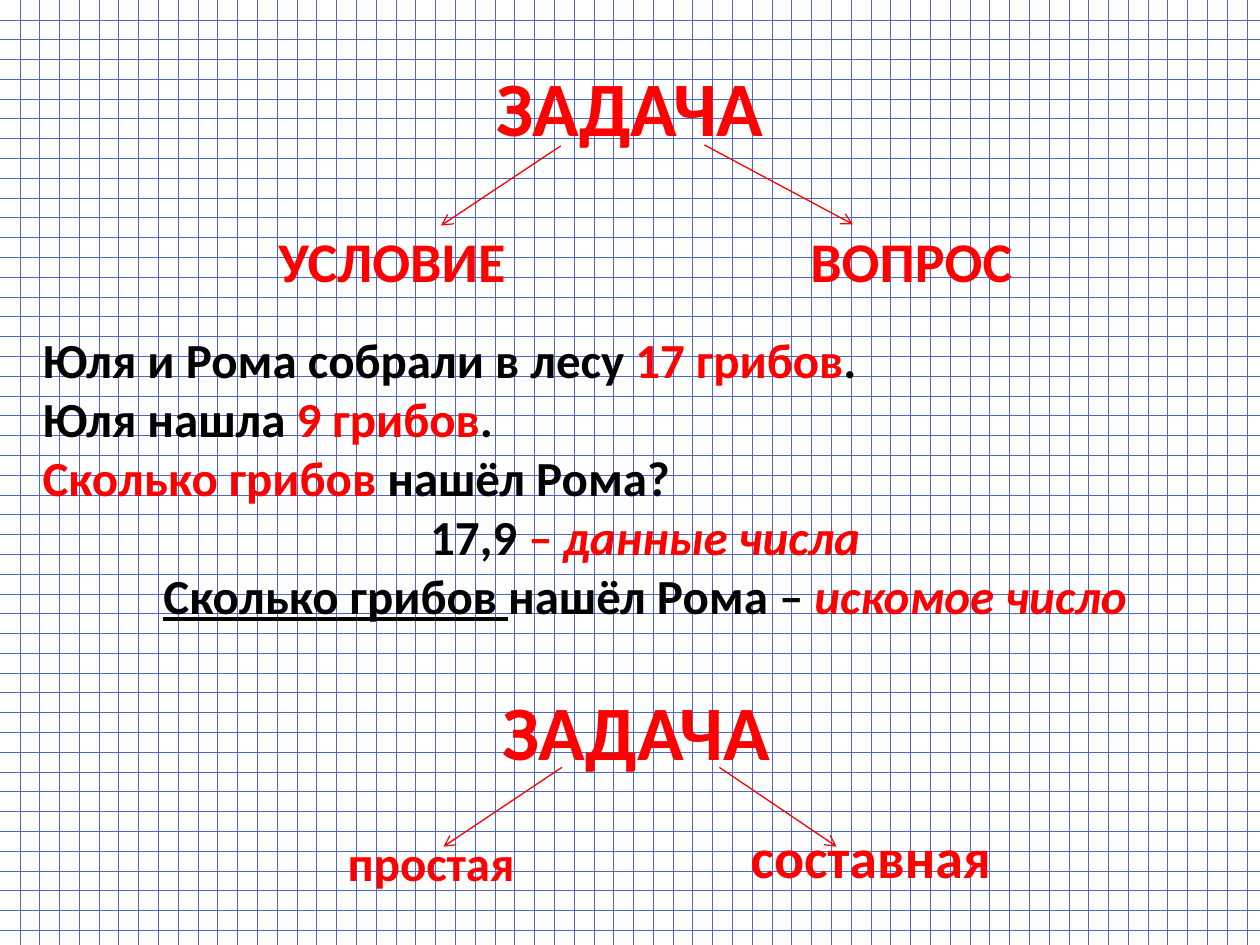
from lxml import etree
from pptx import Presentation
from pptx.dml.color import RGBColor
from pptx.enum import dml, shapes, text
from pptx.oxml.ns import qn
from pptx.util import Pt

COLORS = {"red": "FF0000", "black": "000000", "grid": "4E67C8", "paper": "FFFFFF"}
FONT = "Calibri"


def rgb(name):
    return RGBColor.from_string(COLORS[name])


def add_run(p, words, size, color="red", italic=False, underline=False):
    r = p.add_run()
    r.text = words
    f = r.font
    f.name, f.size, f.bold = FONT, Pt(size), True
    f.color.rgb = rgb(color)
    if italic:
        f.italic = True
    if underline:
        f.underline = True


def add_box(slide, x, y, w, h, wrap=True):
    tf = slide.shapes.add_textbox(Pt(x), Pt(y), Pt(w), Pt(h)).text_frame
    tf.word_wrap = wrap
    return tf


def add_arrow(slide, x1, y1, x2, y2):
    c = slide.shapes.add_connector(
        shapes.MSO_CONNECTOR.STRAIGHT, Pt(x1), Pt(y1), Pt(x2), Pt(y2))
    c.line.color.rgb = rgb("red")
    c.line.width = Pt(0.75)
    etree.SubElement(c.line._get_or_add_ln(), qn("a:tailEnd"), type="arrow")
    etree.SubElement(c._element.spPr, qn("a:effectLst"))


def add_tree(slide, box, title, branches):
    """Title with one arrow and label per branch, all relative to the box."""
    x, y, w, h = box
    tf = add_box(slide, x, y, w, h)
    tf.vertical_anchor = text.MSO_ANCHOR.MIDDLE
    p = tf.paragraphs[0]
    p.alignment = text.PP_ALIGN.CENTER
    add_run(p, title, 44)
    for label, size, (lx, ly), (x1, y1), (x2, y2) in branches:
        add_arrow(slide, x + x1, y + y1, x + x2, y + y2)
        label_tf = add_box(slide, x + lx, y + ly, 160, 46, wrap=False)
        add_run(label_tf.paragraphs[0], label, size)


def add_problem(slide, box, lines):
    tf = add_box(slide, *box)
    for i, (align, runs) in enumerate(lines):
        p = tf.add_paragraph() if i else tf.paragraphs[0]
        p.alignment = align
        for words, color, *style in runs:
            add_run(p, words, 28, color, "i" in style, "u" in style)


def main():
    prs = Presentation()
    prs.slide_width, prs.slide_height = Pt(720), Pt(540)
    slide = prs.slides.add_slide(prs.slide_layouts[6])

    fill = slide.background.fill
    fill.patterned()
    fill.pattern = dml.MSO_PATTERN.DOTTED_GRID
    fill.fore_color.rgb = rgb("grid")
    fill.back_color.rgb = rgb("paper")

    # Each branch: label, size, label corner, arrow start, arrow end
    add_tree(slide, (36, 9.4, 648, 102), "ЗАДАЧА", [
        ("УСЛОВИЕ", 32, (116, 116.6), (284.4, 74), (216, 119.5)),
        ("ВОПРОС", 32, (420, 116.6), (366.5, 73.4), (451.4, 118.8)),
    ])

    left, center = text.PP_ALIGN.LEFT, text.PP_ALIGN.CENTER
    add_problem(slide, (17.3, 185, 702.7, 177), [
        (left, [("Юля и Рома собрали в лесу ", "black"),
                ("17 грибов", "red"), (".", "black")]),
        (left, [("Юля нашла ", "black"), ("9 грибов", "red"), (".", "black")]),
        (left, [("Сколько грибов ", "red"), ("нашёл Рома?", "black")]),
        (center, [("17,9", "black"), (" – ", "red"),
                  ("данные числа", "red", "i")]),
        (center, [("Сколько грибов ", "black", "u"), ("нашёл Рома – ", "black"),
                  ("искомое число", "red", "i")]),
    ])

    add_tree(slide, (39.6, 365.8, 648, 102), "ЗАДАЧА", [
        ("простая", 28, (152, 106.5), (281.5, 72.7), (213.8, 118)),
        ("составная", 32, (382.3, 100.8), (371.5, 72.7), (438.5, 118)),
    ])
    prs.save("out.pptx")


if __name__ == "__main__":
    main()
